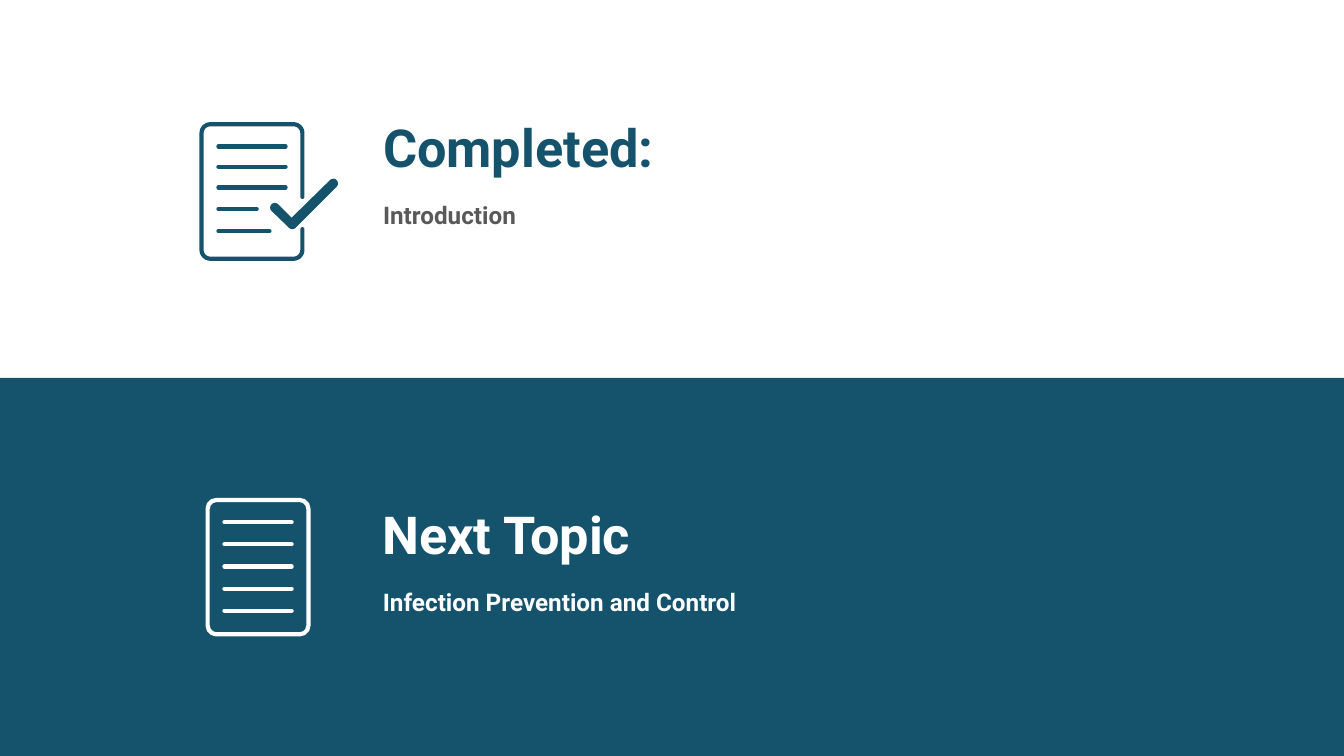
import math
from dataclasses import dataclass

import pptx
import pptx.dml.color
import pptx.enum.shapes
import pptx.enum.text
import pptx.oxml.ns
import pptx.presentation
import pptx.slide
import pptx.util
from lxml import etree

TEAL = pptx.dml.color.RGBColor(0x15, 0x52, 0x6C)
WHITE = pptx.dml.color.RGBColor(0xFF, 0xFF, 0xFF)
GRAY = pptx.dml.color.RGBColor(0x59, 0x59, 0x59)

FONT = "Roboto"
HEADING_SIZE, TOPIC_SIZE = 56, 26
STROKE = pptx.util.Pt(4.5)

# The slide is a grid of 20 columns and 11.25 rows of square cells
COLUMNS, ROWS = 20, 11.25
CELL = pptx.util.Inches(1)
SHEET_WIDTH, SHEET_HEIGHT, CORNER = 1.5, 2, 0.13
RULE_INDENT = 0.25

Point = tuple[float, float]


@dataclass
class Rule:
    row: float
    length: float = 1


@dataclass
class Label:
    text: str
    left: float
    top: float
    width: float
    height: float
    size: int


NEXT_RULES = [Rule(0.33 * number) for number in range(1, 6)]
DONE_RULES = [Rule(0.33), Rule(0.63), Rule(0.94), Rule(1.26, 0.57), Rule(1.59, 0.76)]
NEXT_LABELS = [
    Label("Next Topic", 5.59, 7.43, 4.03, 1.04, HEADING_SIZE),
    Label("Infection Prevention and Control", 5.6, 8.69, 5.94, 0.54, TOPIC_SIZE),
]


def cells(count: float) -> int:
    return round(count * CELL)


def flatten(shape) -> None:
    """Take away the theme's shadow."""
    etree.SubElement(shape.element.spPr, pptx.oxml.ns.qn("a:effectLst"))


def stroke(shape, color: pptx.dml.color.RGBColor) -> None:
    shape.line.color.rgb = color
    shape.line.width = STROKE
    shape.element.spPr.find(pptx.oxml.ns.qn("a:ln")).set("cap", "rnd")


def arc(center: Point, radius: float, start: int, end: int) -> list[Point]:
    """Points along an arc, with degrees running clockwise from the right."""
    steps = 12
    angles = [math.radians(start + (end - start) * step / steps) for step in range(steps + 1)]
    return [(center[0] + radius * math.cos(angle), center[1] + radius * math.sin(angle))
            for angle in angles]


def draw_outline(page: pptx.slide.Slide, points: list[Point], close: bool):
    scaled = [(cells(x), cells(y)) for x, y in points]
    builder = page.shapes.build_freeform(*scaled[0])
    builder.add_line_segments(scaled[1:], close=close)
    shape = builder.convert_to_shape()
    shape.shadow.inherit = False
    return shape


def draw_rules(page: pptx.slide.Slide, left: float, top: float, rules: list[Rule],
               color: pptx.dml.color.RGBColor) -> None:
    start = left + RULE_INDENT
    for rule in rules:
        height = cells(top + rule.row)
        line = page.shapes.add_connector(pptx.enum.shapes.MSO_CONNECTOR.STRAIGHT,
                                         cells(start), height, cells(start + rule.length), height)
        stroke(line, color)
        flatten(line)


def draw_next_icon(page: pptx.slide.Slide, left: float, top: float) -> None:
    sheet = page.shapes.add_shape(pptx.enum.shapes.MSO_SHAPE.ROUNDED_RECTANGLE, cells(left),
                                  cells(top), cells(SHEET_WIDTH), cells(SHEET_HEIGHT))
    sheet.adjustments[0] = CORNER / SHEET_WIDTH
    sheet.shadow.inherit = False
    sheet.fill.background()
    stroke(sheet, WHITE)
    draw_rules(page, left, top, NEXT_RULES, WHITE)


def draw_done_icon(page: pptx.slide.Slide, left: float, top: float) -> None:
    # Sheet, left open on its right side where the tick crosses it
    right, bottom = left + SHEET_WIDTH, top + SHEET_HEIGHT
    near_x, far_x = left + CORNER, right - CORNER
    near_y, far_y = top + CORNER, bottom - CORNER
    points = [(right, top + 1.56)]
    points += arc((far_x, far_y), CORNER, 0, 90)
    points += arc((near_x, far_y), CORNER, 90, 180)
    points += arc((near_x, near_y), CORNER, 180, 270)
    points += arc((far_x, near_y), CORNER, 270, 360)
    points += [(right, top + 1.08)]
    sheet = draw_outline(page, points, close=False)
    sheet.fill.background()
    stroke(sheet, TEAL)
    draw_rules(page, left, top, DONE_RULES, TEAL)

    # Tick with round ends
    half = 0.07
    points = arc((left + 1.96, top + 0.88), half, -135, 45)
    points += arc((left + 1.35, top + 1.49), half, 45, 135)
    points += arc((left + 1.09, top + 1.24), half, 135, 315)
    points += [(left + 1.34, top + 1.39)]
    tick = draw_outline(page, points, close=True)
    tick.fill.solid()
    tick.fill.fore_color.rgb = TEAL
    tick.line.fill.background()


def write(para, text: str, *, size: int, color: pptx.dml.color.RGBColor,
          before: int = 0, after: int = 0) -> None:
    para.alignment = pptx.enum.text.PP_ALIGN.LEFT
    para.space_before, para.space_after = pptx.util.Pt(before), pptx.util.Pt(after)
    span = para.add_run()
    span.text = text
    span.font.name, span.font.size, span.font.bold = FONT, pptx.util.Pt(size), True
    span.font.color.rgb = color


def draw_label(page: pptx.slide.Slide, label: Label) -> None:
    box = page.shapes.add_textbox(cells(label.left), cells(label.top),
                                  cells(label.width), cells(label.height))
    frame = box.text_frame
    frame.word_wrap = False
    frame.auto_size = pptx.enum.text.MSO_AUTO_SIZE.SHAPE_TO_FIT_TEXT
    write(frame.paragraphs[0], label.text, size=label.size, color=WHITE)


def fill_title(page: pptx.slide.Slide) -> None:
    box = page.shapes.title
    box.left, box.top, box.width, box.height = cells(5.5), cells(1.51), cells(11.5), cells(3.67)
    frame = box.text_frame
    frame.word_wrap = True
    frame.auto_size = pptx.enum.text.MSO_AUTO_SIZE.NONE
    frame.vertical_anchor = pptx.enum.text.MSO_ANCHOR.TOP
    frame.margin_left = frame.margin_right = cells(0.2)
    frame.margin_top = frame.margin_bottom = cells(0.2)
    write(frame.paragraphs[0], "Completed:", size=HEADING_SIZE, color=TEAL, after=12)
    write(frame.add_paragraph(), "Introduction", size=TOPIC_SIZE, color=GRAY, before=12, after=12)


def main() -> None:
    deck = pptx.Presentation()
    deck.slide_width, deck.slide_height = cells(COLUMNS), cells(ROWS)
    page = deck.slides.add_slide(deck.slide_layouts.get_by_name("Title Only"))

    # Lower half: the next topic
    band = page.shapes.add_shape(pptx.enum.shapes.MSO_SHAPE.RECTANGLE, 0, cells(ROWS / 2),
                                 cells(COLUMNS), cells(ROWS / 2))
    band.shadow.inherit = False
    band.fill.solid()
    band.fill.fore_color.rgb = TEAL
    band.line.fill.background()
    draw_next_icon(page, 3.09, 7.44)
    for label in NEXT_LABELS:
        draw_label(page, label)

    # Upper half: the completed topic
    fill_title(page)
    draw_done_icon(page, 3, 1.85)

    deck.save("out.pptx")


if __name__ == "__main__":
    main()
